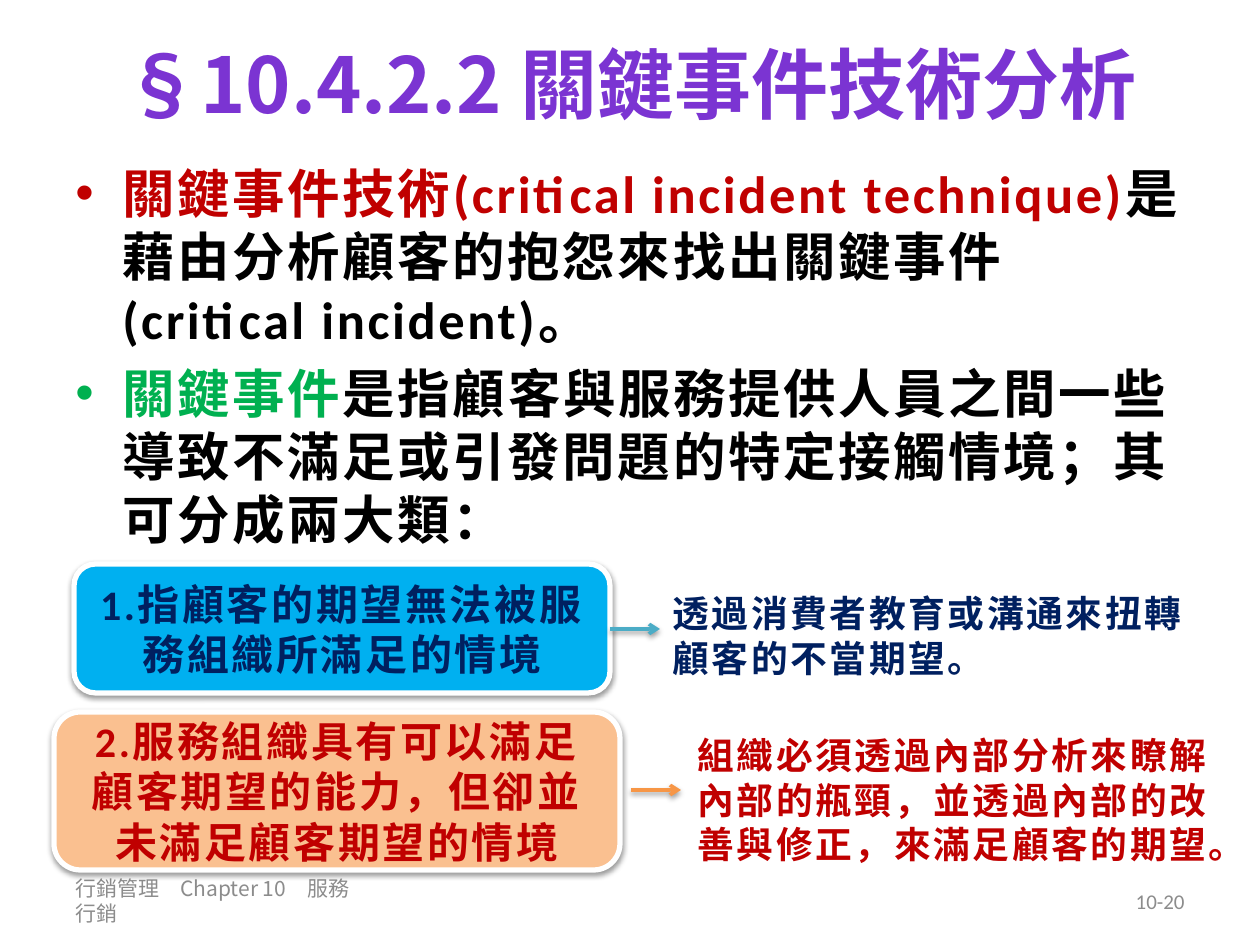
"""Build the slide on critical incident technique analysis."""
from dataclasses import dataclass

from pptx import Presentation
from pptx.dml.color import RGBColor
from pptx.enum.shapes import MSO_CONNECTOR as Connector, MSO_SHAPE as Shape
from pptx.enum.text import MSO_ANCHOR as Anchor, PP_ALIGN as Align
from pptx.oxml import parse_xml
from pptx.oxml.ns import nsdecls
from pptx.util import Emu, Pt


@dataclass(frozen=True)
class Theme:
    latin: str = "Calibri"
    heading: str = "Noto Sans CJK SC"
    purple: str = "7B34D2"
    red: str = "C00000"
    green: str = "00B050"
    navy: str = "002060"
    black: str = "000000"
    white: str = "FFFFFF"
    gray: str = "8C8C8C"
    sky: str = "00B0F0"
    peach: str = "FAC090"
    teal: str = "4BACC6"
    orange: str = "F79646"
    title_size: int = 44
    body_size: int = 30
    card_size: int = 24
    note_size: int = 21
    footer_size: int = 12


theme = Theme()
PX = 914400 / 126
SHADOW = (
    f'<a:effectLst {nsdecls("a")}><a:outerShdw blurRad="39370" dist="20320" '
    'dir="5400000" rotWithShape="0"><a:srgbClr val="000000">'
    '<a:alpha val="38000"/></a:srgbClr></a:outerShdw></a:effectLst>'
)


def px(*values):
    return [Emu(round(value * PX)) for value in values]


def write(para, parts, size, font=theme.latin, bold=True, spacing=150):
    for text, color in parts:
        span = para.add_run()
        span.text = text
        span.font.size = Pt(size)
        span.font.bold = bold
        span.font.color.rgb = RGBColor.from_string(color)
        span.font.name = font
        properties = span.font._element
        properties.append(parse_xml(f'<a:ea {nsdecls("a")} typeface="{theme.latin}"/>'))
        if spacing:
            properties.set("spc", str(spacing))


deck = Presentation()
deck.slide_width, deck.slide_height = px(1260, 945)
page = deck.slides.add_slide(deck.slide_layouts[6])

labels = [
    ((63, 0, 1134, 165), "§10.4.2.2 關鍵事件技術分析", theme.title_size,
     theme.purple, theme.heading, Align.CENTER, True),
    ((63, 876, 309, 50), "行銷管理　Chapter 10　服務行銷", theme.footer_size,
     theme.gray, theme.heading, Align.LEFT, False),
    ((903, 876, 294, 50), "10-20", theme.footer_size,
     theme.gray, theme.latin, Align.RIGHT, False),
]
for place, text, size, color, font, align, bold in labels:
    box = page.shapes.add_textbox(*px(*place))
    box.text_frame.word_wrap = True
    box.text_frame.vertical_anchor = Anchor.MIDDLE
    para = box.text_frame.paragraphs[0]
    para.alignment = align
    write(para, [(text, color)], size, font, bold, 0)

bullets = [
    [("關鍵事件技術(critical incident technique)", theme.red),
     ("是藉由分析顧客的抱怨來找出關鍵事件(critical incident)。", theme.black)],
    [("關鍵事件", theme.green),
     ("是指顧客與服務提供人員之間一些導致不滿足或引發問題的特定接觸情境；"
      "其可分成兩大類：", theme.black)],
]
body = page.shapes.add_textbox(*px(63, 155, 1134, 446))
body.text_frame.word_wrap = True
for index, parts in enumerate(bullets):
    para = body.text_frame.add_paragraph() if index else body.text_frame.paragraphs[0]
    properties = para._p.get_or_add_pPr()
    indent = px(47)[0]
    properties.set("marL", str(indent))
    properties.set("indent", str(-indent))
    for tag in ('buFont typeface="Arial"', 'buChar char="•"'):
        properties.append(parse_xml(f'<a:{tag} {nsdecls("a")}/>'))
    if index:
        para.space_before = Pt(6)
    write(para, parts, theme.body_size)

cases = [
    ((74, 564, 536, 129), theme.sky, "1.指顧客的期望無法被服務組織所滿足的情境",
     (610, 629), theme.teal, (660, 585, 556, 102),
     "透過消費者教育或溝通來扭轉顧客的不當期望。", theme.navy),
    ((54, 712, 566, 158), theme.peach,
     "2.服務組織具有可以滿足顧客期望的能力，但卻並未滿足顧客期望的情境",
     (631, 790), theme.orange, (685, 727, 559, 146),
     "組織必須透過內部分析來瞭解內部的瓶頸，並透過內部的改善與修正，來滿足顧客的期望。",
     theme.red),
]
for place, fill, text, (left, top), accent, note_place, note_text, ink in cases:
    card = page.shapes.add_shape(Shape.ROUNDED_RECTANGLE, *px(*place))
    card.fill.solid()
    card.fill.fore_color.rgb = RGBColor.from_string(fill)
    card.line.color.rgb = RGBColor.from_string(theme.white)
    card.line.width = Pt(3)
    card._element.spPr.append(parse_xml(SHADOW))
    card.text_frame.word_wrap = True
    card.text_frame.vertical_anchor = Anchor.MIDDLE
    para = card.text_frame.paragraphs[0]
    para.alignment = Align.CENTER
    write(para, [(text, ink)], theme.card_size)

    arrow = page.shapes.add_connector(
        Connector.STRAIGHT, *px(left, top, left + 50, top))
    arrow.line.color.rgb = RGBColor.from_string(accent)
    arrow.line.width = Pt(2)
    arrow.line._get_or_add_ln().append(
        parse_xml(f'<a:tailEnd {nsdecls("a")} type="arrow"/>'))
    arrow._element.spPr.append(parse_xml(SHADOW))

    note = page.shapes.add_textbox(*px(*note_place))
    note.text_frame.word_wrap = True
    write(note.text_frame.paragraphs[0], [(note_text, ink)], theme.note_size)

deck.save("out.pptx")
